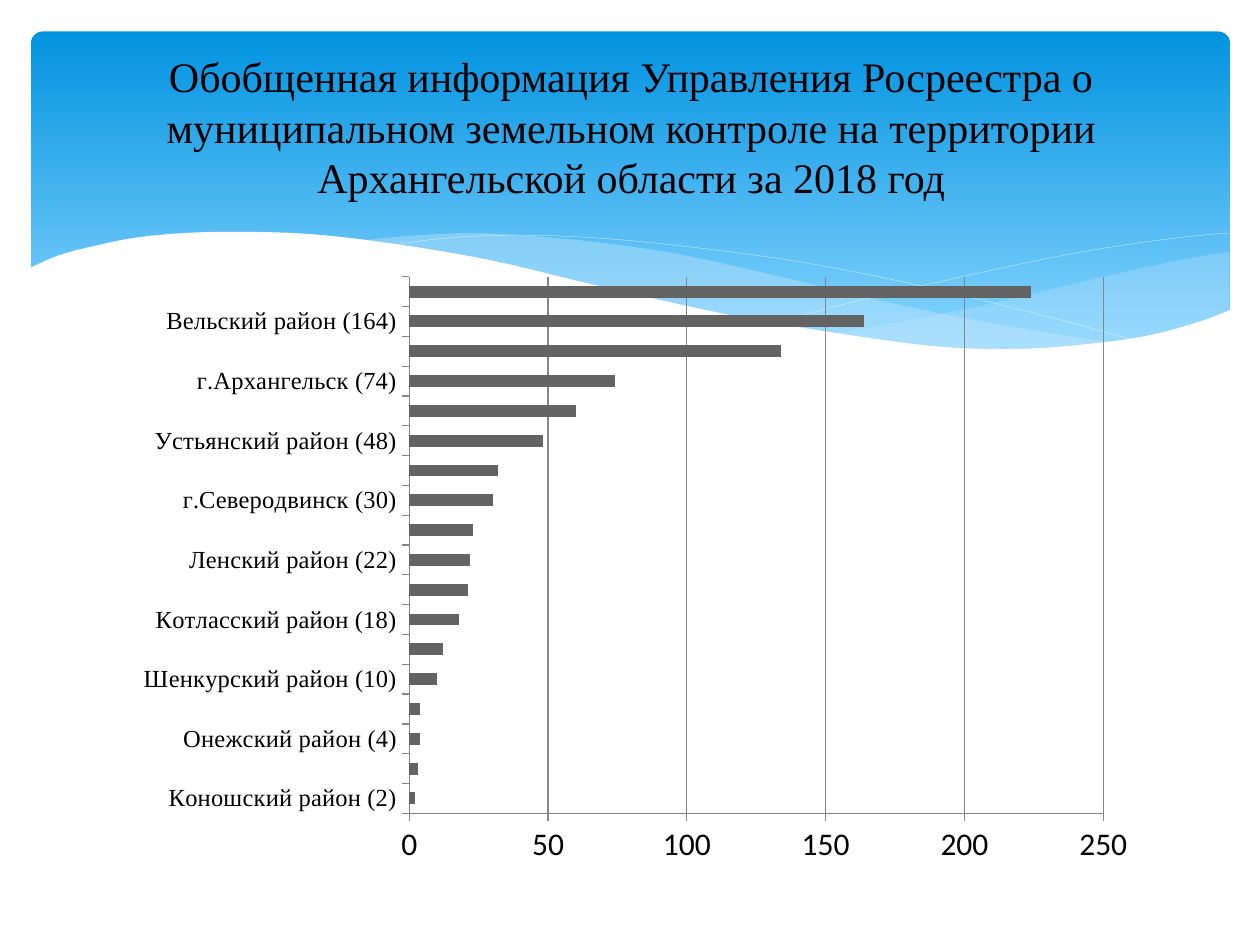
from dataclasses import dataclass

from lxml import etree
from pptx import Presentation
from pptx.chart.data import CategoryChartData
from pptx.dml.color import RGBColor
from pptx.enum.chart import XL_CHART_TYPE, XL_TICK_MARK
from pptx.enum.shapes import MSO_SHAPE
from pptx.enum.text import MSO_ANCHOR, PP_ALIGN
from pptx.oxml import parse_xml
from pptx.oxml.ns import nsdecls, qn
from pptx.util import Pt

BAR = XL_CHART_TYPE.BAR_CLUSTERED
TICK = XL_TICK_MARK.OUTSIDE
ROUND = MSO_SHAPE.ROUNDED_RECTANGLE
MIDDLE = MSO_ANCHOR.MIDDLE
CENTER = PP_ALIGN.CENTER

COLORS = {
    "deep": "0293E0", "light": "83D3FE", "mist": "C6E7FC",
    "white": "FFFFFF", "black": "000000", "bar": "636363", "axis": "868686",
}
SERIF, SANS = "Times New Roman", "Calibri"
STEPS = 6

TITLE = ("Обобщенная информация Управления Росреестра о муниципальном "
         "земельном контроле на территории Архангельской области за 2018 год")

COUNTS = [2, 3, 4, 4, 10, 12, 18, 21, 22, 23, 30, 32, 48, 60, 74, 134, 164, 224]
# Every second bar, from the first, has a label.
AREAS = [
    "Коношский район", "Онежский район", "Шенкурский район",
    "Котласский район", "Ленский район", "г.Северодвинск",
    "Устьянский район", "г.Архангельск", "Вельский район",
]

Points = list[tuple[float, float]]


@dataclass
class Wave:
    """Smooth edges joined into one outline; without a fill it is a line."""
    edges: list[Points]
    fill: str | None = None
    alpha: int = 100


WAVES = [
    Wave([[(702.5, 144), (682.6, 147), (663, 151), (620, 160.6),
           (579.6, 170.6), (542, 178.6), (508, 185), (476, 190.8)],
          [(476, 190.8), (507.6, 195), (536.4, 198), (562, 199.4),
           (586, 200), (615, 198.7), (640, 195.8), (663, 190.8),
           (683, 185), (702.5, 178)]], "mist", 29),
    Wave([[(206, 137.5), (236, 134.6), (273.6, 133.2), (318, 136),
           (361.4, 141), (399.6, 147.6), (453, 159.8), (508, 172.8),
           (558, 183), (602.6, 190.8), (643, 196.6)],
          [(643, 196.6), (617, 199.4), (581, 200), (538.6, 198.7),
           (489.6, 193), (432.7, 183.6), (381.6, 172.8), (323.3, 159.8),
           (275.8, 149), (232.6, 141), (206, 137.5)]], "mist", 40),
    Wave([[(222.5, 140.4), (247.7, 136.8), (278.6, 134.6), (311.8, 134.6),
           (352, 136.8), (400, 141.8), (458, 149.8), (523.4, 162.7),
           (598, 180.7), (653, 195.8)]]),
    Wave([[(441.4, 185), (483.8, 173.5), (538.6, 160.6), (602, 147),
           (644.4, 139.7), (684.7, 134.6), (702, 133.2)]]),
    Wave([[(703.4, 177), (684, 184.3), (655, 192), (621.4, 196.6),
           (582.5, 199.4), (535.7, 198), (481, 190.8), (417, 180),
           (342, 163.4), (281.5, 149), (227.5, 139.7), (180, 134),
           (139, 132.5), (105, 133.2), (76.3, 136), (54.7, 140.4),
           (42.5, 143.3), (33, 146.2), (26, 149), (16.6, 153.4)],
          [(16.6, 237), (703.4, 237)]], "white"),
]


def tint(name: str) -> RGBColor:
    return RGBColor.from_string(COLORS[name])


def style(target, values: dict) -> None:
    for key, value in values.items():
        setattr(target, key, value)


def smooth(knots: Points) -> Points:
    """Return a Catmull-Rom curve through the knots."""
    ends = [knots[0], *knots, knots[-1]]
    curve = [knots[0]]
    for a, b, c, d in zip(ends, ends[1:], ends[2:], ends[3:]):
        for step in range(1, STEPS + 1):
            t = step / STEPS
            curve.append(tuple(
                (2 * q + (r - p) * t + (2 * p - 5 * q + 4 * r - s) * t ** 2
                 + (3 * q - p - 3 * r + s) * t ** 3) / 2
                for p, q, r, s in zip(a, b, c, d)))
    return curve


def draw_wave(slide, wave: Wave) -> None:
    dots = [(Pt(x), Pt(y)) for edge in wave.edges
            for x, y in (smooth(edge) if len(edge) > 2 else edge)]
    path = slide.shapes.build_freeform(*dots[0], scale=1.0)
    path.add_line_segments(dots[1:], close=wave.fill is not None)
    shape = path.convert_to_shape()
    shape.shadow.inherit = False
    if wave.fill is None:
        shape.fill.background()
        shape.line.color.rgb = tint("white")
        shape.line.width = Pt(0.1)
        return
    shape.line.fill.background()
    shape.fill.solid()
    shape.fill.fore_color.rgb = tint(wave.fill)
    if wave.alpha < 100:
        color = shape.fill._xPr.find(qn("a:solidFill"))[0]
        etree.SubElement(color, qn("a:alpha"), val=str(wave.alpha * 1000))


def draw_band(slide) -> None:
    band = slide.shapes.add_shape(ROUND, Pt(17.8), Pt(18), Pt(685), Pt(194.4))
    band.adjustments[0] = 0.034
    band.shadow.inherit = False
    band.line.fill.background()
    band.fill.gradient()
    band.fill.gradient_angle = 270
    stops = band.fill.gradient_stops
    for stop, place, name in zip(stops, (0, 0.9), ("deep", "light")):
        stop.position = place
        stop.color.rgb = tint(name)


def draw_title(slide) -> None:
    box = slide.shapes.add_textbox(Pt(36.7), Pt(37.4), Pt(648), Pt(98.6))
    frame = box.text_frame
    style(frame, {"word_wrap": True, "vertical_anchor": MIDDLE,
                  "margin_top": Pt(0), "margin_bottom": Pt(29)})
    para = frame.paragraphs[0]
    para.text = TITLE
    para.alignment = CENTER
    style(para.font, {"name": SERIF, "size": Pt(24)})
    para.font.color.rgb = tint("black")


def place_plot(chart) -> None:
    """Fix the inner plot area as shares of the chart frame."""
    parts = "".join(f'<c:{key} val="{value}"/>' for key, value in (
        ("layoutTarget", "inner"), ("xMode", "edge"), ("yMode", "edge"),
        ("x", 0.28), ("y", 0.02), ("w", 0.68), ("h", 0.88)))
    plot = chart._chartSpace.chart.plotArea
    for old in plot.findall(qn("c:layout")):
        plot.remove(old)
    plot.insert(0, parse_xml(
        f'<c:layout {nsdecls("c")}><c:manualLayout>{parts}'
        '</c:manualLayout></c:layout>'))


def draw_chart(slide) -> None:
    labels = [""] * len(COUNTS)
    labels[::2] = [f"{area} ({count})"
                   for area, count in zip(AREAS, COUNTS[::2])]
    data = CategoryChartData()
    data.categories = labels
    data.add_series("Series 1", COUNTS)
    chart = slide.shapes.add_chart(
        BAR, Pt(70.6), Pt(151.2), Pt(583.2), Pt(348.5), data).chart
    style(chart, {"has_legend": False, "has_title": False})
    style(chart.font, {"name": SANS, "size": Pt(18)})
    chart.font.color.rgb = tint("black")
    plot = chart.plots[0]
    style(plot, {"gap_width": 150, "vary_by_categories": False})
    fill = plot.series[0].format.fill
    fill.solid()
    fill.fore_color.rgb = tint("bar")

    cat, val = chart.category_axis, chart.value_axis
    style(val, {"minimum_scale": 0, "maximum_scale": 250, "major_unit": 50,
                "has_major_gridlines": True})
    for axis in (cat, val):
        axis.major_tick_mark = TICK
    for part in (cat, val, val.major_gridlines):
        part.format.line.color.rgb = tint("axis")
        part.format.line.width = Pt(0.75)
    style(cat.tick_labels.font, {"name": SERIF, "size": Pt(14)})
    skip = parse_xml(f'<c:tickLblSkip {nsdecls("c")} val="2"/>')
    cat._element.find(qn("c:noMultiLvlLbl")).addprevious(skip)
    place_plot(chart)


def main() -> None:
    deck = Presentation()
    style(deck, {"slide_width": Pt(720), "slide_height": Pt(540)})
    slide = deck.slides.add_slide(deck.slide_layouts[6])
    draw_band(slide)
    for wave in WAVES:
        draw_wave(slide, wave)
    draw_chart(slide)
    draw_title(slide)
    deck.save("out.pptx")


if __name__ == "__main__":
    main()
